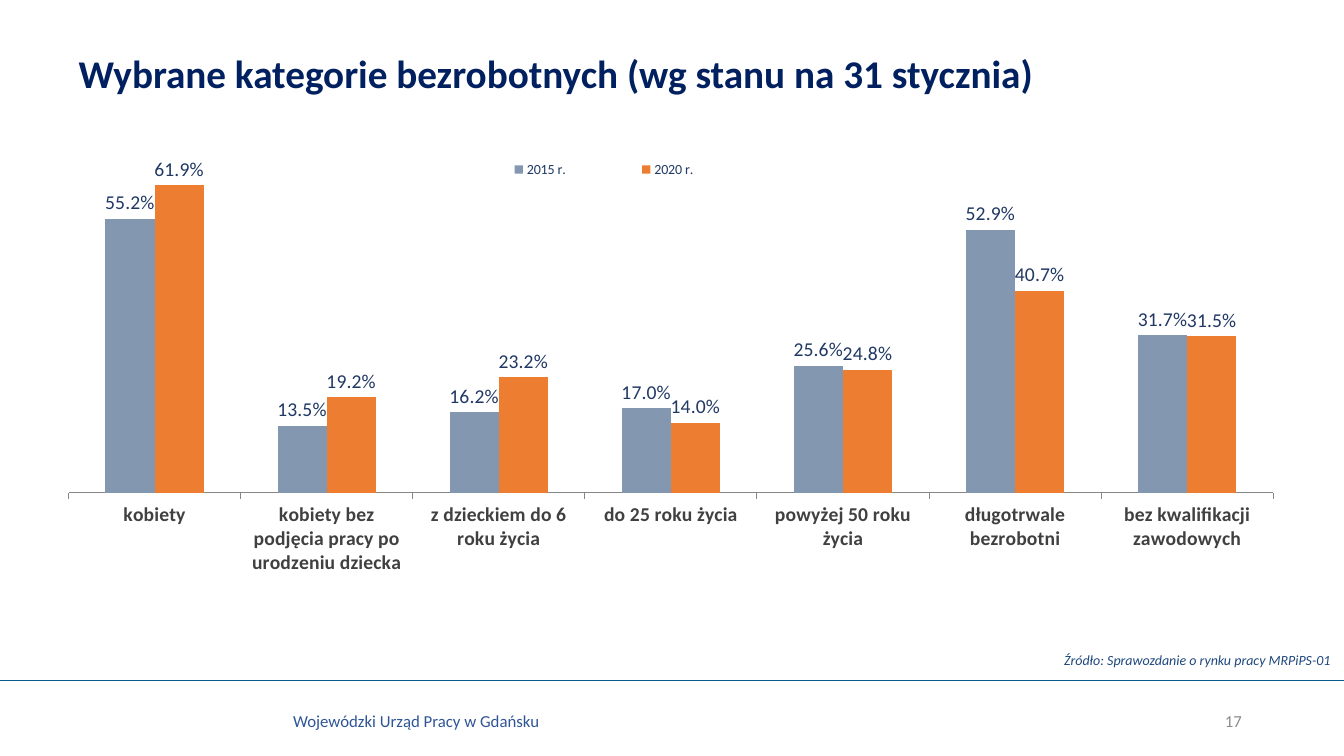
from dataclasses import dataclass

from lxml import etree
from pptx import Presentation
from pptx.chart.data import CategoryChartData
from pptx.dml.color import RGBColor
from pptx.enum.chart import (XL_CHART_TYPE, XL_LABEL_POSITION,
                             XL_LEGEND_POSITION, XL_TICK_MARK)
from pptx.enum.shapes import MSO_CONNECTOR
from pptx.enum.text import MSO_ANCHOR, MSO_AUTO_SIZE, PP_ALIGN
from pptx.oxml.ns import qn
from pptx.util import Pt

COLUMNS = XL_CHART_TYPE.COLUMN_CLUSTERED
OUTSIDE = XL_LABEL_POSITION.OUTSIDE_END
KEY_RIGHT = XL_LEGEND_POSITION.RIGHT
NO_TICK, TICK_OUT = XL_TICK_MARK.NONE, XL_TICK_MARK.OUTSIDE
STRAIGHT = MSO_CONNECTOR.STRAIGHT
TOP, MIDDLE = MSO_ANCHOR.TOP, MSO_ANCHOR.MIDDLE
LEFT, RIGHT = PP_ALIGN.LEFT, PP_ALIGN.RIGHT
NO_FIT = MSO_AUTO_SIZE.NONE

NAVY = RGBColor(0x00, 0x20, 0x60)
INK = RGBColor(0x20, 0x38, 0x64)
BLUE = RGBColor(0x2F, 0x55, 0x97)
SOURCE = RGBColor(0x1F, 0x49, 0x7D)
RULE = RGBColor(0x06, 0x5B, 0x8A)
DARK = RGBColor(0x40, 0x40, 0x40)
GREY = RGBColor(0x8C, 0x8C, 0x8C)
AXIS = RGBColor(0x86, 0x86, 0x86)
STEEL = RGBColor(0x84, 0x97, 0xB0)
ORANGE = RGBColor(0xED, 0x7D, 0x31)

FACE = "Calibri"
WIDTH, HEIGHT = 960, 540
PERCENT = "0.0%"


@dataclass
class Label:
    text: str
    box: tuple[float, float, float, float]
    size: float
    color: RGBColor
    bold: bool = False
    italic: bool = False
    align: PP_ALIGN = LEFT
    anchor: MSO_ANCHOR = TOP
    wrap: bool = True


@dataclass
class Year:
    name: str
    color: RGBColor
    shares: tuple[float, ...]


TITLE = Label("Wybrane kategorie bezrobotnych (wg stanu na 31 stycznia)",
              (49, 10.8, 861, 82), 28, NAVY, bold=True, anchor=MIDDLE)
NOTES = (
    Label("Wojewódzki Urząd Pracy w Gdańsku", (202.3, 504, 256.3, 21.8), 12, BLUE),
    Label("Źródło: Sprawozdanie o rynku pracy MRPiPS-01",
          (753, 462.2, 207, 19.4), 10, SOURCE, italic=True, wrap=False),
    Label("17", (678.2, 500.4, 216, 28.8), 12, GREY, align=RIGHT, anchor=MIDDLE),
)
GROUPS = (
    "kobiety",
    "kobiety bez podjęcia pracy po urodzeniu dziecka",
    "z dzieckiem do 6 roku życia",
    "do 25 roku życia",
    "powyżej 50 roku życia",
    "długotrwale bezrobotni",
    "bez kwalifikacji zawodowych",
)
YEARS = (
    Year("2015 r.", STEEL, (0.552, 0.135, 0.162, 0.17, 0.256, 0.529, 0.317)),
    Year("2020 r.", ORANGE, (0.619, 0.192, 0.232, 0.14, 0.248, 0.407, 0.315)),
)


def style(font, size: float, color: RGBColor, bold=False, italic=False) -> None:
    font.name, font.size = FACE, Pt(size)
    font.bold, font.italic = bold, italic
    font.color.rgb = color


def write(shape, label: Label) -> None:
    """Place a text shape and fill it from its label."""
    shape.left, shape.top, shape.width, shape.height = map(Pt, label.box)
    frame = shape.text_frame
    frame.text = label.text
    frame.auto_size = NO_FIT
    frame.word_wrap = label.wrap
    frame.vertical_anchor = label.anchor
    line = frame.paragraphs[0]
    line.alignment = label.align
    style(line.font, label.size, label.color, label.bold, label.italic)


def layout(x: float, y: float, w: float, h: float, inner=False):
    """Build a manual chart layout from shares of the chart area."""
    root = etree.Element(qn("c:layout"))
    manual = etree.SubElement(root, qn("c:manualLayout"))
    parts = [("layoutTarget", "inner")] if inner else []
    parts += [("xMode", "edge"), ("yMode", "edge"),
              ("x", x), ("y", y), ("w", w), ("h", h)]
    for tag, value in parts:
        etree.SubElement(manual, qn(f"c:{tag}")).set("val", str(value))
    return root


def draw_chart(slide) -> None:
    data = CategoryChartData(number_format=PERCENT)
    data.categories = GROUPS
    for year in YEARS:
        data.add_series(year.name, year.shares)
    box = map(Pt, (22.3, 73.4, 919.4, 353.5))
    chart = slide.shapes.add_chart(COLUMNS, *box, data).chart
    chart.has_title = False
    style(chart.font, 10, INK)

    plot = chart.plots[0]
    plot.gap_width, plot.overlap = 150, 0
    plot.vary_by_categories = False
    for series, year in zip(plot.series, YEARS):
        series.format.fill.solid()
        series.format.fill.fore_color.rgb = year.color
        tags = series.data_labels
        tags.show_value = True
        tags.number_format, tags.number_format_is_linked = PERCENT, False
        tags.position = OUTSIDE
        style(tags.font, 14, INK)

    scale = chart.value_axis
    scale.minimum_scale, scale.maximum_scale = 0, 0.7
    scale.has_major_gridlines = False
    scale.visible = False
    axis = chart.category_axis
    axis.major_tick_mark, axis.minor_tick_mark = TICK_OUT, NO_TICK
    axis.format.line.color.rgb = AXIS
    axis.format.line.width = Pt(0.75)
    style(axis.tick_labels.font, 14, DARK, bold=True)

    chart.has_legend = True
    chart.legend.position = KEY_RIGHT
    chart.legend.include_in_layout = False
    style(chart.legend.font, 10, INK)

    area = chart.element.find(".//" + qn("c:plotArea"))
    for old in area.findall(qn("c:layout")):
        area.remove(old)
    area.insert(0, layout(0.029, 0.086, 0.936, 0.702, inner=True))
    key = chart.element.find(".//" + qn("c:legend"))
    for old in key.findall(qn("c:layout")):
        key.remove(old)
    key.find(qn("c:legendPos")).addnext(layout(0.32, 0.1, 0.25, 0.07))


def draw_rule(slide, y: float) -> None:
    rule = slide.shapes.add_connector(STRAIGHT, 0, Pt(y), Pt(WIDTH), Pt(y))
    rule.line.color.rgb = RULE
    rule.line.width = Pt(1)
    props = rule.element.find(qn("p:spPr"))
    etree.SubElement(props, qn("a:effectLst"))


def main() -> None:
    deck = Presentation()
    deck.slide_width, deck.slide_height = Pt(WIDTH), Pt(HEIGHT)
    slide = deck.slides.add_slide(deck.slide_layouts[5])
    draw_rule(slide, 486)
    write(slide.shapes.title, TITLE)
    draw_chart(slide)
    for note in NOTES:
        write(slide.shapes.add_textbox(0, 0, 0, 0), note)
    deck.save("out.pptx")


if __name__ == "__main__":
    main()
